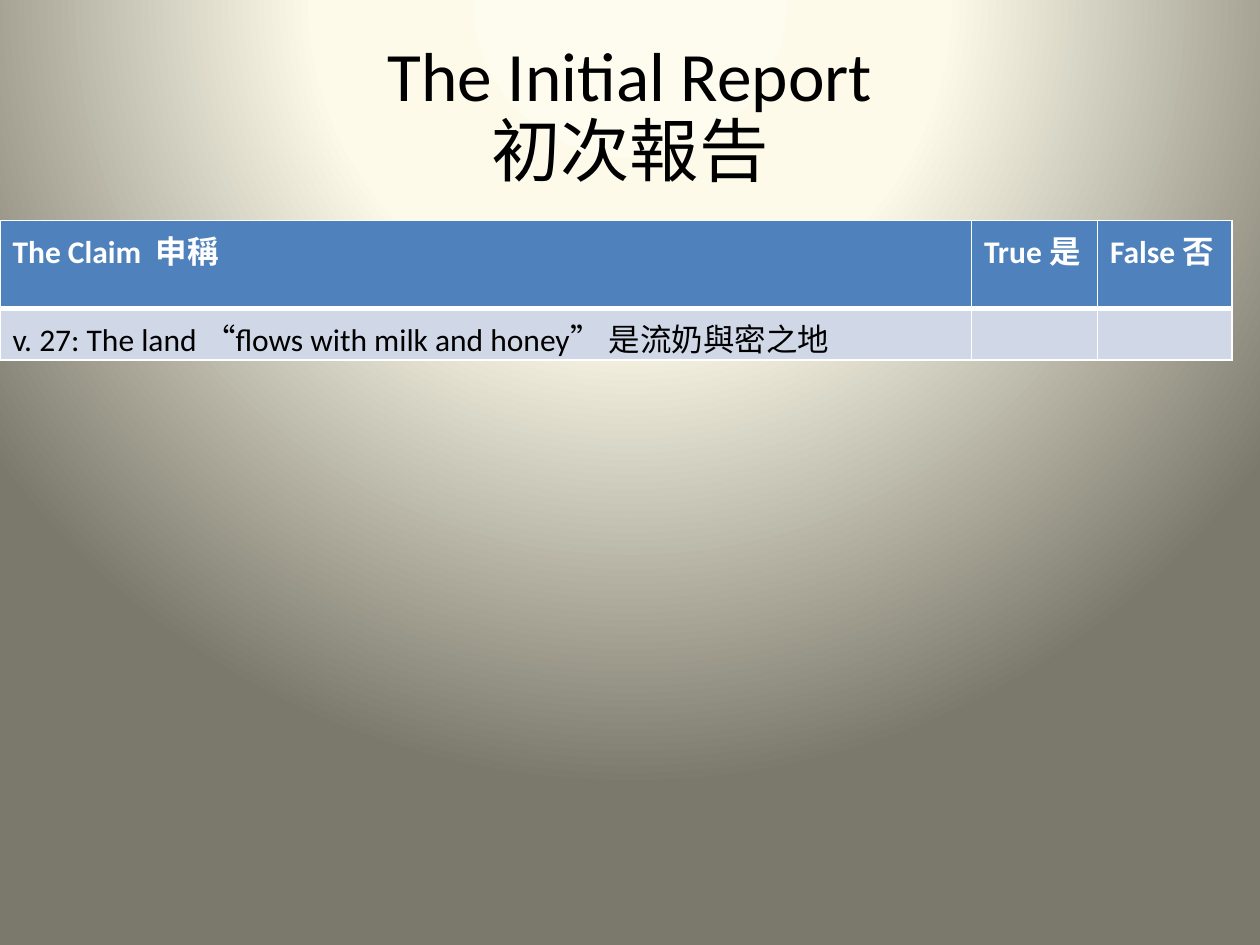
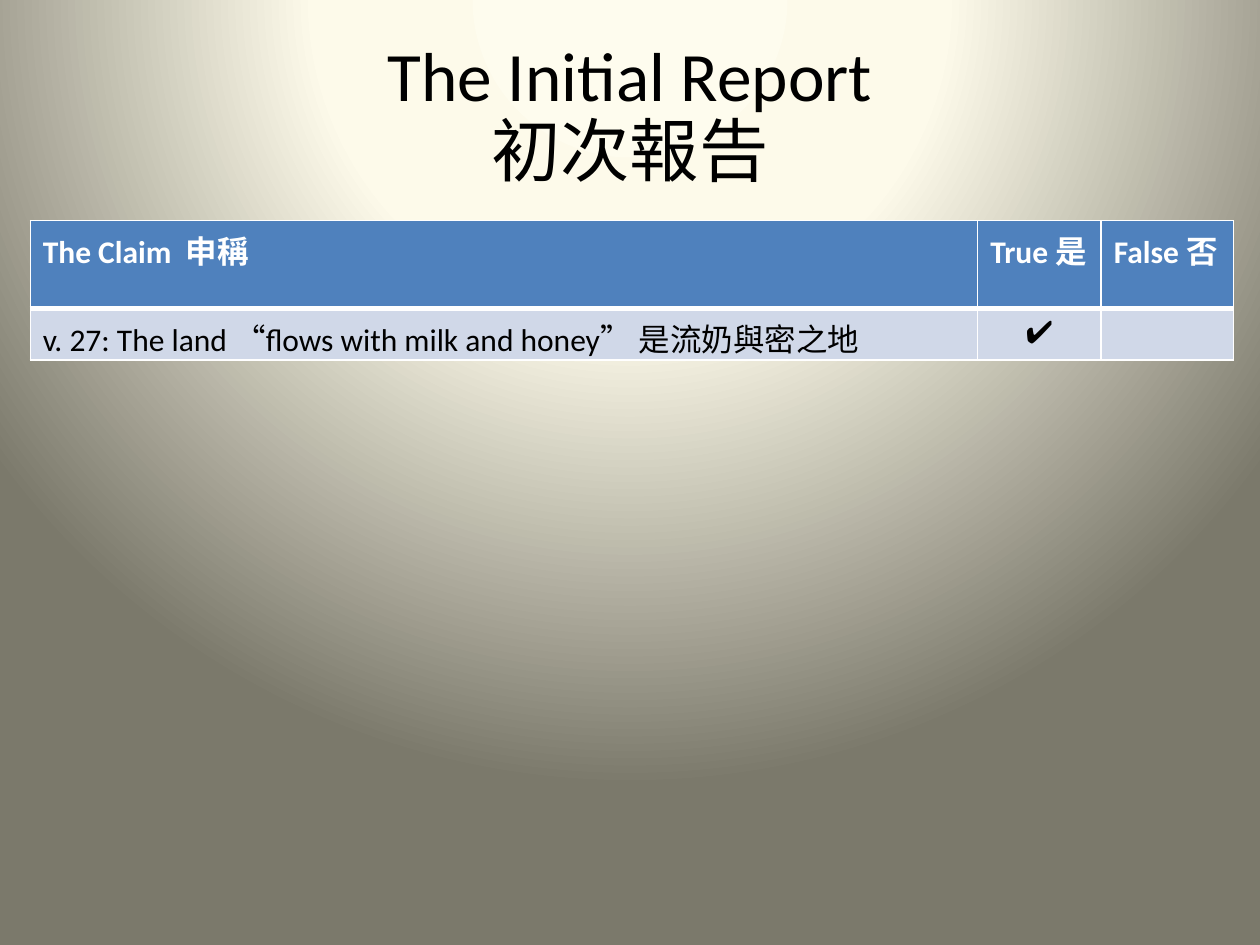
from lxml.etree import SubElement
from pptx import Presentation
from pptx.dml.color import RGBColor
from pptx.enum.text import MSO_ANCHOR, PP_ALIGN
from pptx.oxml import parse_xml
from pptx.oxml.ns import nsdecls, qn
from pptx.util import Inches, Pt

BLACK = RGBColor(0x00, 0x00, 0x00)
WHITE = RGBColor(0xFF, 0xFF, 0xFF)
BLUE = RGBColor(0x4F, 0x81, 0xBD)
PALE_BLUE = RGBColor(0xD0, 0xD8, 0xE8)
GLOW = ((0, RGBColor(0xFE, 0xFC, 0xEE)),
        (40, RGBColor(0xFD, 0xFA, 0xEA)),
        (100, RGBColor(0x7B, 0x79, 0x6B)))

GRID_COLUMNS, GRID_ROWS = 40, 30
TITLE_AREA = (2, 1.2, 36, 5)
TABLE_TOP = 7
TABLE_ROW = 1.63

TITLE_FONT = {"name": "Calibri", "size": Pt(39.6), "bold": False}
HEADER_FONT = {"name": "Calibri", "size": Pt(18), "bold": True}
BODY_FONT = {**HEADER_FONT, "bold": False}
MARK_FONT = {**BODY_FONT, "name": "Arial"}

TITLE = "The Initial Report\v初次報告"
HEADERS = ("The Claim  申稱", "True 是", "False 否")
CLAIM = "v. 27: The land “flows with milk and honey” 是流奶與密之地"
CHECK = "✔"


def set_all(target, values):
    for name, value in values.items():
        setattr(target, name, value)


class ReportDeck:
    """Holds the deck, its grid and the page being filled."""

    def __init__(self):
        self.deck = Presentation()
        set_all(self.deck, {"slide_width": Inches(10), "slide_height": Inches(7.5)})
        self.page = None

    def across(self, columns):
        return round(self.deck.slide_width * columns / GRID_COLUMNS)

    def down(self, rows):
        return round(self.deck.slide_height * rows / GRID_ROWS)

    def area(self, left, top, width, height):
        return self.across(left), self.down(top), self.across(width), self.down(height)

    def add_page(self):
        self.page = self.deck.slides.add_slide(self.deck.slide_layouts[6])
        stops = "".join(
            f'<a:gs pos="{place * 1000}"><a:srgbClr val="{color}"/></a:gs>'
            for place, color in GLOW)
        background = parse_xml(
            f'<p:bg {nsdecls("p", "a")}><p:bgPr><a:gradFill rotWithShape="1">'
            f'<a:gsLst>{stops}</a:gsLst><a:path path="circle">'
            '<a:fillToRect l="50000" t="-80000" r="50000" b="180000"/></a:path>'
            '</a:gradFill><a:effectLst/></p:bgPr></p:bg>')
        self.page.element.cSld.insert(0, background)

    def add_text(self, frame, text, font, color, align):
        frame.text = text
        para = frame.paragraphs[0]
        para.alignment = align
        for span in para.runs:
            set_all(span.font, font)
            span.font.color.rgb = color
        return para

    def add_title(self, text):
        box = self.page.shapes.add_textbox(*self.area(*TITLE_AREA))
        set_all(box.text_frame,
                {"word_wrap": True, "vertical_anchor": MSO_ANCHOR.MIDDLE})
        para = self.add_text(box.text_frame, text, TITLE_FONT, BLACK, PP_ALIGN.CENTER)
        para.line_spacing = 0.9

    def add_borders(self, cell, top, bottom):
        properties = cell._tc.get_or_add_tcPr()
        widths = {"a:lnL": 1, "a:lnR": 1, "a:lnT": top, "a:lnB": bottom}
        for place, (tag, width) in enumerate(widths.items()):
            line = SubElement(properties, qn(tag), w=str(Pt(width)))
            fill = SubElement(line, qn("a:solidFill"))
            SubElement(fill, qn("a:srgbClr"), val=str(WHITE))
            properties.insert(place, line)

    def add_cell(self, cell, text, is_header):
        cell.fill.solid()
        cell.fill.fore_color.rgb = BLUE if is_header else PALE_BLUE
        font = HEADER_FONT if is_header else BODY_FONT
        align = PP_ALIGN.LEFT
        if text == CHECK:
            font, align = MARK_FONT, PP_ALIGN.CENTER
        color = WHITE if is_header else BLACK
        self.add_text(cell.text_frame, text, font, color, align)
        self.add_borders(cell, *((1, 3) if is_header else (3, 1)))

    def add_claims(self, left, widths, rows):
        area = self.area(left, TABLE_TOP, sum(widths), TABLE_ROW * len(rows))
        table = self.page.shapes.add_table(len(rows), len(widths), *area).table
        set_all(table, {"first_row": False, "horz_banding": False})
        for column, width in zip(table.columns, widths):
            column.width = self.across(width)
        for row_number, texts in enumerate(rows):
            for column_number, text in enumerate(texts):
                self.add_cell(table.cell(row_number, column_number), text,
                              row_number == 0)


def main():
    report = ReportDeck()
    layouts = ((0, (30.84, 4, 4.28), ""),
               (0.96, (30.08, 3.92, 4.2), CHECK))
    for left, widths, true_mark in layouts:
        report.add_page()
        report.add_title(TITLE)
        report.add_claims(left, widths, (HEADERS, (CLAIM, true_mark, "")))
    report.deck.save("out.pptx")


if __name__ == "__main__":
    main()
